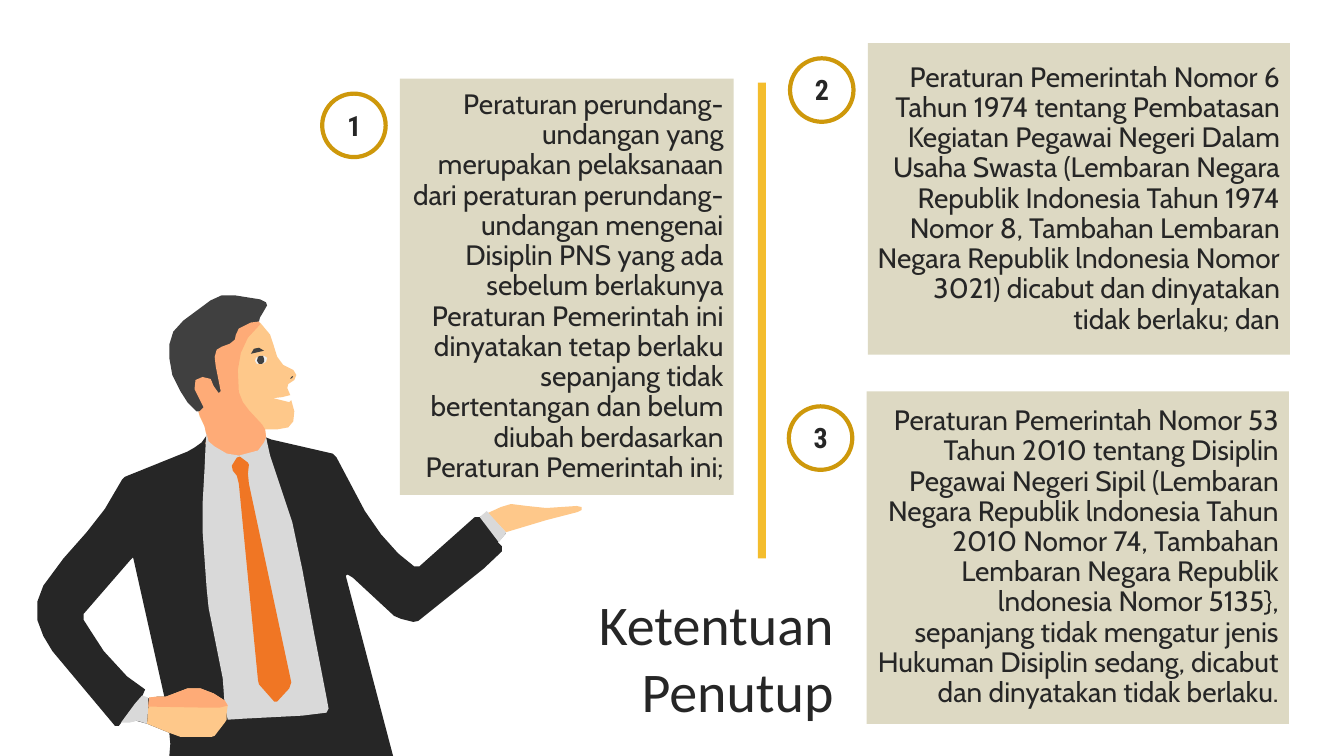
import pptx
import pptx.util
import pptx.dml.color
import pptx.enum.shapes
import pptx.enum.text
import pptx.oxml.ns
import lxml.etree
from pptx.util import Cm

COLOURS = {
    "sand": "DDD9C3", "gold": "F4BD2D", "ring": "CE980B", "dark": "262626",
    "skin": "FEC88A", "shade": "FEAB77", "hair": "404040", "shirt": "D9D9D9",
    "tie": "F07624", "eye": "F0F0F0",
}
UNIT = Cm(0.0254)

ARTICLES = [
    ("Peraturan perundang-undangan yang merupakan pelaksanaan dari peraturan "
     "perundang-undangan mengenai Disiplin PNS yang ada sebelum berlakunya Peraturan "
     "Pemerintah ini dinyatakan tetap berlaku sepanjang tidak bertentangan dan belum "
     "diubah berdasarkan Peraturan Pemerintah ini;", (10.08, 1.98, 8.41, 10.49)),
    ("Peraturan Pemerintah Nomor 6 Tahun 1974 tentang Pembatasan Kegiatan Pegawai Negeri "
     "Dalam Usaha Swasta (Lembaran Negara Republik Indonesia Tahun 1974 Nomor 8, Tambahan "
     "Lembaran Negara Republik lndonesia Nomor 3021) dicabut dan dinyatakan tidak berlaku; "
     "dan", (21.87, 1.09, 10.64, 7.85)),
    ("Peraturan Pemerintah Nomor 53 Tahun 2010 tentang Disiplin Pegawai Negeri Sipil "
     "(Lembaran Negara Republik lndonesia Tahun 2010 Nomor 74, Tambahan Lembaran Negara "
     "Republik lndonesia Nomor 5135}, sepanjang tidak mengatur jenis Hukuman Disiplin "
     "sedang, dicabut dan dinyatakan tidak berlaku.", (21.84, 9.86, 10.64, 8.38)),
]

HEAD = [(286, 381), (292, 377), (294, 372), (291, 367), (281, 362), (275, 354), (271, 341),
        (268, 332), (258, 320), (240, 315), (200, 320), (185, 350), (198, 413), (203, 423),
        (205, 432), (204, 440), (207, 447), (216, 451), (226, 453), (237, 452), (265, 446),
        (264, 434), (263, 426), (275, 426), (286, 424), (291, 418), (292, 408), (289, 397),
        (287, 399), (271, 395), (280, 394), (288, 392), (285, 385)]
SUIT = [(494, 538), (502, 529), (483, 509), (476, 513), (471, 513), (416, 562), (411, 562),
        (395, 549), (378, 530), (362, 507), (334, 454), (330, 450), (269, 436), (264, 434),
        (265, 445), (237, 452), (216, 451), (207, 447), (204, 440), (205, 432), (200, 439),
        (193, 444), (186, 448), (124, 473), (121, 476), (104, 505), (86, 528), (63, 554),
        (43, 581), (37, 597), (37, 615), (43, 631), (52, 646), (114, 720), (118, 720),
        (121, 716), (129, 716), (135, 715), (146, 718), (168, 727), (169, 738), (168, 750),
        (390, 750), (343, 571), (345, 570), (350, 573), (391, 611), (398, 614), (410, 617),
        (415, 616), (480, 564), (498, 547), (498, 542)]
ARM_GAP = [(157, 691), (148, 693), (141, 691), (144, 684), (126, 671), (103, 646), (90, 626),
           (83, 615), (83, 609), (129, 556), (132, 553), (133, 557), (163, 691)]
OPEN_HAND = [(577, 503), (572, 502), (542, 504), (523, 502), (507, 500), (497, 503),
             (484, 509), (502, 528), (542, 516), (573, 508), (577, 506)]
HAIR = [(198, 408), (195, 408), (186, 399), (179, 388), (171, 372), (168, 355), (168, 342),
        (172, 329), (182, 318), (209, 298), (220, 293), (233, 293), (258, 297), (264, 300),
        (265, 303), (261, 310), (258, 315), (257, 319), (253, 320), (237, 327), (235, 331),
        (234, 338), (228, 342), (221, 345), (216, 350), (215, 357), (218, 376), (221, 386),
        (220, 391), (214, 389), (211, 383), (210, 378), (205, 376), (199, 376), (195, 380),
        (195, 385), (202, 402), (203, 406)]
FACE_SHADE = [(197, 409), (202, 404), (193, 386), (194, 377), (201, 374), (209, 376),
              (212, 383), (217, 390), (219, 388), (214, 363), (213, 354), (215, 347),
              (220, 344), (228, 341), (233, 337), (234, 332), (237, 326), (249, 320),
              (257, 319), (258, 322), (246, 335), (239, 350), (236, 367), (237, 389),
              (241, 399), (247, 407), (260, 421), (263, 426), (264, 434), (265, 446),
              (252, 450), (237, 452), (226, 453), (216, 451), (207, 447), (204, 440),
              (205, 432), (203, 423)]
RIGHT_CUFF = [(483, 507), (502, 528), (502, 529), (495, 538), (476, 513)]
BROW = [(249, 351), (252, 346), (257, 345), (262, 348)]
NOSTRIL = [(291, 373), (290, 375), (288, 376), (289, 374)]
SHIRT = [(221, 673), (207, 603), (205, 583), (201, 527), (201, 500), (203, 465), (204, 442),
         (205, 430), (207, 438), (213, 443), (225, 450), (237, 452), (256, 447), (262, 439),
         (264, 434), (268, 452), (290, 518), (300, 565), (312, 630), (324, 692), (326, 703),
         (324, 707), (300, 710), (242, 713), (226, 714), (223, 700)]
TIE = [(247, 461), (246, 470), (247, 480), (289, 677), (287, 683), (275, 696), (272, 696),
       (257, 679), (256, 675), (237, 480), (235, 472), (231, 467), (230, 462), (235, 454),
       (238, 453), (246, 459)]
EYE_WHITE = [(265, 355), (264, 359), (260, 361), (255, 361), (253, 358), (254, 355),
             (258, 353), (262, 353)]
PUPIL = [(262, 356), (262, 359), (260, 361), (257, 361), (255, 358), (256, 354), (258, 353),
         (261, 353)]
LEFT_CUFF = [(147, 692), (141, 690), (134, 698), (120, 717), (128, 717), (136, 715),
             (146, 718), (147, 703)]
KNUCKLES = [(223, 695), (212, 688), (199, 683), (186, 683), (165, 691), (157, 691), (148, 692)]
FIST = KNUCKLES + [(146, 718), (168, 727), (179, 731), (210, 731), (213, 730), (223, 717),
                   (225, 714), (225, 707), (226, 700)]
FIST_SHADE = KNUCKLES + [(147, 701), (203, 702), (218, 702), (226, 700)]

MAN = [
    ("skin", [HEAD]), ("eye", [EYE_WHITE]), ("dark", [SUIT, ARM_GAP]), ("skin", [OPEN_HAND]),
    ("hair", [HAIR]), ("shade", [FACE_SHADE]), ("shirt", [RIGHT_CUFF]), ("hair", [BROW]),
    ("hair", [NOSTRIL]), ("shirt", [SHIRT]), ("tie", [TIE]), ("hair", [PUPIL]),
    ("shirt", [LEFT_CUFF]), ("skin", [FIST]), ("shade", [FIST_SHADE]),
]


class Deck:
    def __init__(self):
        self.prs = pptx.Presentation()
        self.prs.slide_width, self.prs.slide_height = Cm(33.87), Cm(19.05)
        self.s = self.prs.slides.add_slide(self.prs.slide_layouts[1])

    def rgb(self, name):
        return pptx.dml.color.RGBColor.from_string(COLOURS[name])

    def place(self, sp, box):
        sp.left, sp.top, sp.width, sp.height = map(Cm, box)

    def fill(self, sp, colour):
        sp.fill.solid()
        sp.fill.fore_color.rgb = self.rgb(colour)

    def shape(self, kind, box):
        sp = self.s.shapes.add_shape(kind, *map(Cm, box))
        sp.shadow.inherit = False
        return sp

    def set_text(self, sp, text, size, font, align, anchor="MIDDLE", bold=False):
        tf = sp.text_frame
        tf.text = text
        tf.word_wrap = True
        tf.auto_size = pptx.enum.text.MSO_AUTO_SIZE.NONE
        tf.vertical_anchor = pptx.enum.text.MSO_ANCHOR[anchor]
        p = tf.paragraphs[0]
        p.alignment = pptx.enum.text.PP_ALIGN[align]
        r = p.runs[0]
        r.font.size, r.font.name, r.font.bold = pptx.util.Pt(size), font, bold
        r.font.color.rgb = self.rgb("dark")
        return p

    def title(self, text, box):
        sp = self.s.shapes.title
        self.place(sp, box)
        self.set_text(sp, text, 40, "Calibri", "RIGHT")

    def article(self, sp, text):
        self.fill(sp, "sand")
        p = self.set_text(sp, text, 20, "Cabin", "RIGHT")
        p.line_spacing, p.space_before = 0.9, pptx.util.Pt(10)
        return p

    def body(self, text, box):
        sp = self.s.placeholders[1]
        self.place(sp, box)
        pPr = self.article(sp, text)._p.get_or_add_pPr()
        pPr.set("marL", "0")
        pPr.set("indent", "0")
        lxml.etree.SubElement(pPr, pptx.oxml.ns.qn("a:buNone"))

    def panel(self, text, box):
        self.article(self.bar("sand", box), text)

    def bar(self, colour, box):
        sp = self.shape(pptx.enum.shapes.MSO_SHAPE.RECTANGLE, box)
        self.fill(sp, colour)
        sp.line.fill.background()
        return sp

    def badge(self, number, left, top):
        sp = self.shape(pptx.enum.shapes.MSO_SHAPE.OVAL, (left, top, 1.6, 1.6))
        sp.fill.background()
        sp.line.color.rgb = self.rgb("ring")
        sp.line.width = pptx.util.Pt(3)
        label = self.s.shapes.add_textbox(*map(Cm, (left + 0.12, top + 0.24, 1.37, 1.12)))
        label.text_frame.margin_left = label.text_frame.margin_right = Cm(0.3)
        self.set_text(label, str(number), 20, "Roboto Condensed", "CENTER", "TOP", True)

    def figure(self, parts):
        group = self.s.shapes.add_group_shape()
        for colour, outlines in parts:
            builder = group.shapes.build_freeform(*outlines[0][0], scale=UNIT)
            builder.add_line_segments(outlines[0][1:])
            for outline in outlines[1:]:
                builder.move_to(*outline[0])
                builder.add_line_segments(outline[1:])
            sp = builder.convert_to_shape()
            sp.shadow.inherit = False
            self.fill(sp, colour)
            sp.line.fill.background()


def main():
    deck = Deck()
    deck.title("Ketentuan Penutup", (10.59, 15.57, 10.67, 1.96))
    deck.figure(MAN)
    deck.bar("gold", (19.1, 2.08, 0.2, 11.99))
    for number, (text, box) in enumerate(ARTICLES, 1):
        add = deck.body if number == 1 else deck.panel
        add(text, box)
        deck.badge(number, box[0] - 1.96, box[1] + 0.38)
    deck.prs.save("out.pptx")


if __name__ == "__main__":
    main()
